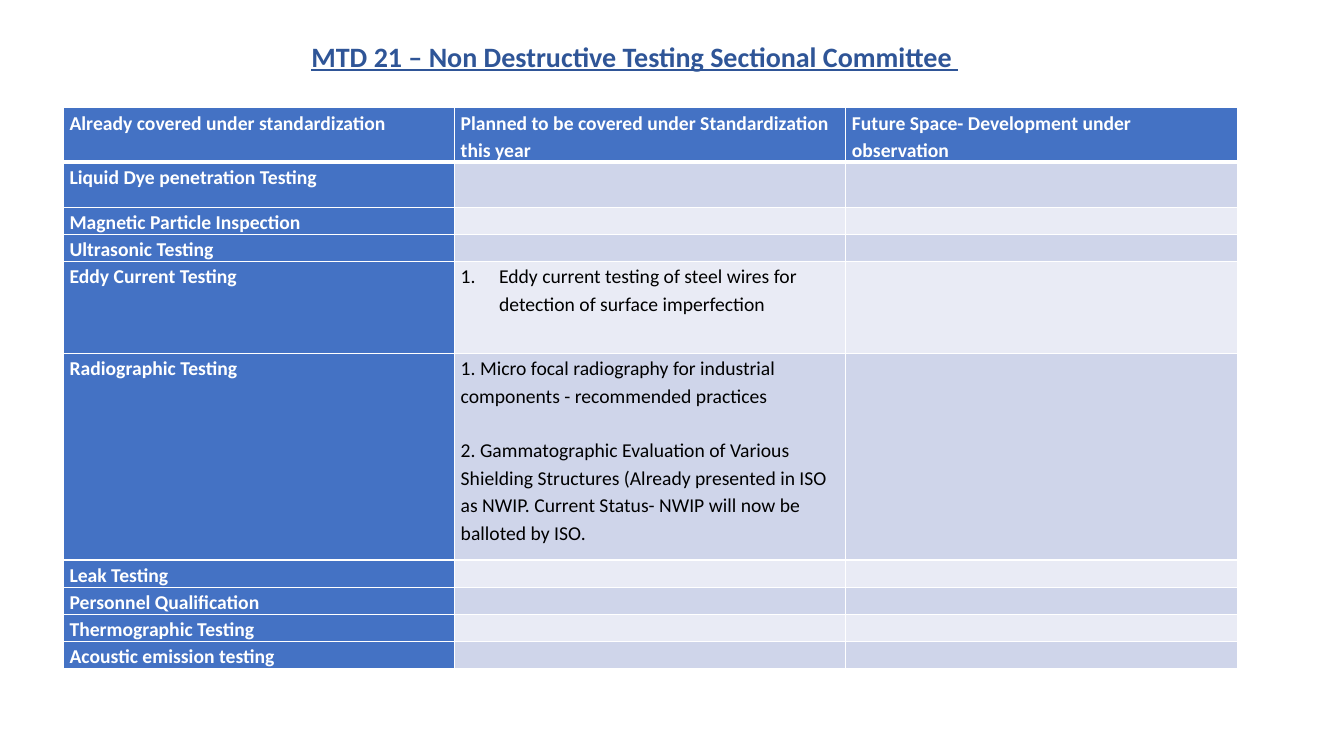
from lxml import etree
from pptx import Presentation
from pptx.dml.color import RGBColor
from pptx.enum.text import MSO_AUTO_SIZE
from pptx.oxml.ns import qn
from pptx.util import Inches, Pt

WIDE, HIGH = 13.33, 7.5
FIT = MSO_AUTO_SIZE.SHAPE_TO_FIT_TEXT
WHITE = RGBColor(0xFF, 0xFF, 0xFF)
BLACK = RGBColor(0, 0, 0)
NAVY = RGBColor(0x2F, 0x55, 0x97)
BLUE = RGBColor(0x44, 0x72, 0xC4)
BANDS = RGBColor(0xE9, 0xEB, 0xF5), RGBColor(0xCF, 0xD5, 0xEA)

TITLE = {"name": "Calibri", "size": Pt(20), "bold": True, "underline": True}
HEAD = {"name": "Calibri", "size": Pt(14), "bold": True}
BODY = {"name": "Calibri", "size": Pt(14), "bold": False}
INSET = {"margin_left": Inches(0.06), "margin_right": Inches(0.06),
         "margin_top": 0, "margin_bottom": 0}

LEFT, TOP, COL = 0.63, 1.07, 3.88
LINE = 0.27
PLANS = "Planned to be covered under Standardization this year"
FUTURE = "Future Space- Development under observation"
EDDY = "Eddy current testing of steel wires for detection of surface imperfection"
MICRO = ("1. Micro focal radiography for industrial components"
         " - recommended practices")
GAMMA = ("2. Gammatographic Evaluation of Various Shielding Structures"
         " (Already presented in ISO as NWIP. Current Status- NWIP will now"
         " be balloted by ISO.")
ROWS = [
    (0.53, "Already covered under standardization", [PLANS], [FUTURE]),
    (0.45, "Liquid Dye penetration Testing", [], []),
    (LINE, "Magnetic Particle Inspection", [], []),
    (LINE, "Ultrasonic Testing", [], []),
    (0.91, "Eddy Current Testing", [EDDY], []),
    (2.05, "Radiographic Testing", [MICRO, GAMMA], []),
    (LINE, "Leak Testing", [], []),
    (LINE, "Personnel Qualification", [], []),
    (LINE, "Thermographic Testing", [], []),
    (LINE, "Acoustic emission testing", [], []),
]


def style(item, form):
    """Set each attribute named in a format dict."""
    for name, value in form.items():
        setattr(item, name, value)


def write(para, text, form, color):
    """Add one run of styled text to a paragraph."""
    para.line_spacing = 1.15
    run = para.add_run()
    run.text = text
    style(run.font, form)
    run.font.color.rgb = color


def number(para):
    """Turn a paragraph into a numbered item with a hanging indent."""
    props = para._p.get_or_add_pPr()
    dent = Inches(0.38)
    props.set("marL", str(dent))
    props.set("indent", str(-dent))
    etree.SubElement(props, qn("a:buAutoNum"), type="arabicPeriod")


def edge(cell, sides):
    """Draw white borders of the given widths round a cell."""
    props = cell._tc.get_or_add_tcPr()
    for side, width in sides.items():
        line = etree.SubElement(props, qn("a:ln" + side), w=str(Pt(width)))
        fill = etree.SubElement(line, qn("a:solidFill"))
        etree.SubElement(fill, qn("a:srgbClr"), val=str(WHITE))


def fill_cell(cell, texts, form, color, back):
    """Fill a cell with paragraphs, or keep it empty at body size."""
    style(cell, INSET)
    cell.fill.solid()
    cell.fill.fore_color.rgb = back
    frame = cell.text_frame
    for place, text in enumerate(texts):
        para = frame.add_paragraph() if place else frame.paragraphs[0]
        write(para, text, form, color)
        if place:
            para.space_before = Pt(19.6)
    if not texts:
        etree.SubElement(frame.paragraphs[0]._p, qn("a:endParaRPr"), sz="1400")


def add_title(slide, text):
    """Place the underlined heading."""
    box = slide.shapes.add_textbox(
        Inches(2.99), Inches(0.29), Inches(7.84), Inches(0.47))
    frame = box.text_frame
    style(frame, {"word_wrap": True, "auto_size": FIT})
    para = frame.paragraphs[0]
    para.space_after = Pt(10)
    write(para, text, TITLE, NAVY)


def add_grid(slide):
    """Build the table of testing methods."""
    high = sum(row[0] for row in ROWS)
    table = slide.shapes.add_table(
        len(ROWS), 3, Inches(LEFT), Inches(TOP),
        Inches(3 * COL), Inches(high)).table
    for col in table.columns:
        col.width = Inches(COL)
    for r, (tall, name, plan, future) in enumerate(ROWS):
        table.rows[r].height = Inches(tall)
        for c, texts in enumerate(([name], plan, future)):
            cell = table.cell(r, c)
            edge(cell, {"L": 1, "R": 1, "T": 3 if r == 1 else 1,
                        "B": 1 if r else 3})
            if r == 0 or c == 0:
                fill_cell(cell, texts, HEAD, WHITE, BLUE)
            else:
                fill_cell(cell, texts, BODY, BLACK, BANDS[r % 2])
            if texts == [EDDY]:
                number(cell.text_frame.paragraphs[0])


def main():
    """Build and save the slide."""
    deck = Presentation()
    deck.slide_width, deck.slide_height = Inches(WIDE), Inches(HIGH)
    slide = deck.slides.add_slide(deck.slide_layouts[6])
    add_title(slide, "MTD 21 – Non Destructive Testing Sectional Committee ")
    add_grid(slide)
    deck.save("out.pptx")


if __name__ == "__main__":
    main()
